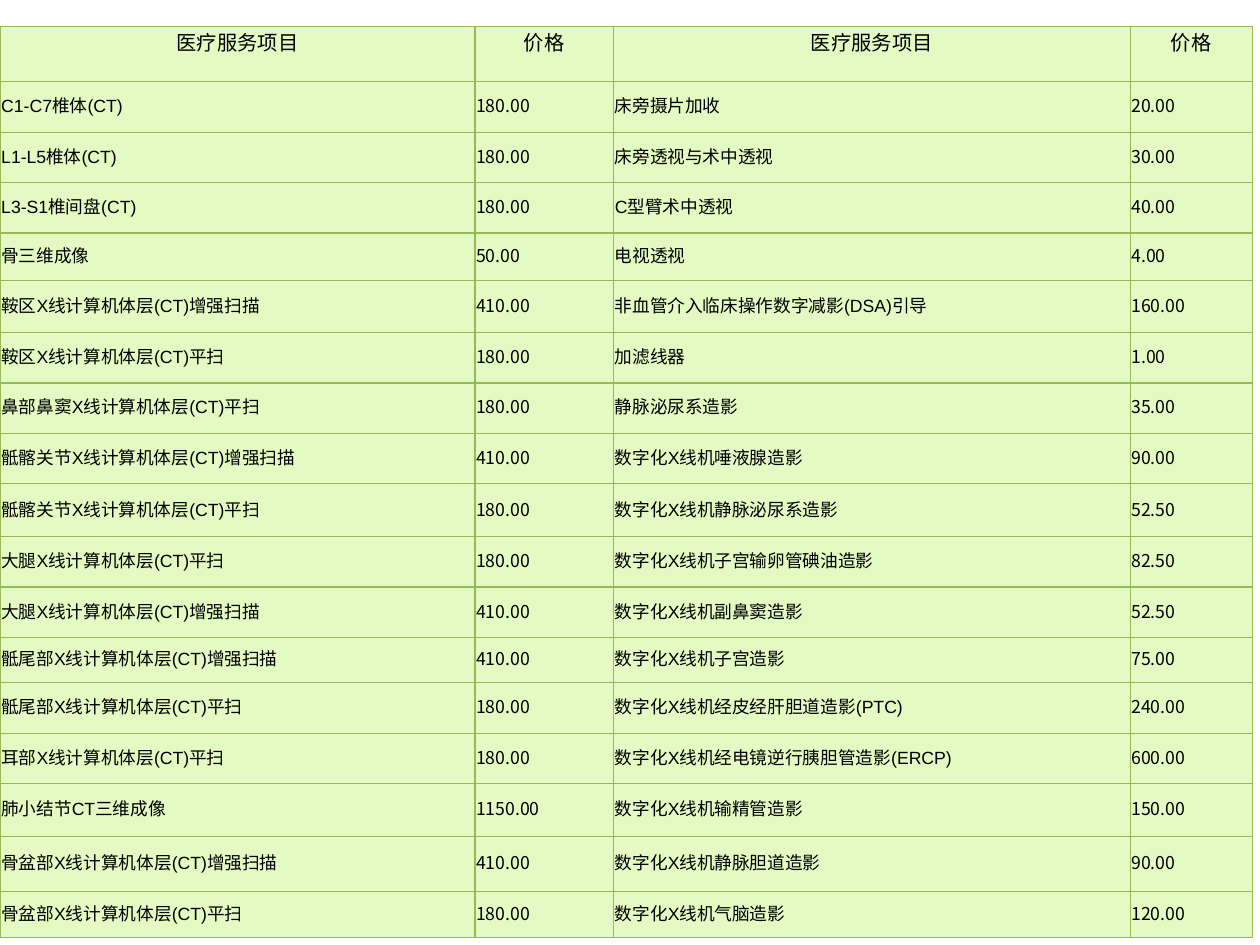
"""Build a price list slide of medical imaging services."""
from dataclasses import dataclass

from lxml.etree import SubElement
from pptx import Presentation
from pptx.dml.color import RGBColor
from pptx.enum.text import MSO_ANCHOR, PP_ALIGN
from pptx.oxml.ns import qn
from pptx.util import Inches, Pt


@dataclass(frozen=True)
class Theme:
    fill: str = "E3FAC3"
    line: str = "98B955"
    ink: str = "000000"
    head_font: str = "Calibri"
    item_font: str = "Arial"
    cost_font: str = "Noto Sans CJK SC"
    asian_font: str = "Noto Sans CJK SC"
    head_size: float = 11.6
    body_size: float = 10.1
    line_size: float = 0.75


theme = Theme()
widths = [3.77, 1.1, 4.1, 0.97]
heights = [0.44, 0.4, 0.4, 0.4, 0.38, 0.41, 0.4, 0.4, 0.4,
           0.42, 0.4, 0.4, 0.36, 0.4, 0.4, 0.42, 0.44, 0.36]
rows = [
    ("医疗服务项目", "价格", "医疗服务项目", "价格"),
    ("C1-C7椎体(CT)", "180.00", "床旁摄片加收", "20.00"),
    ("L1-L5椎体(CT)", "180.00", "床旁透视与术中透视", "30.00"),
    ("L3-S1椎间盘(CT)", "180.00", "C型臂术中透视", "40.00"),
    ("骨三维成像", "50.00", "电视透视", "4.00"),
    ("鞍区X线计算机体层(CT)增强扫描", "410.00", "非血管介入临床操作数字减影(DSA)引导", "160.00"),
    ("鞍区X线计算机体层(CT)平扫", "180.00", "加滤线器", "1.00"),
    ("鼻部鼻窦X线计算机体层(CT)平扫", "180.00", "静脉泌尿系造影", "35.00"),
    ("骶髂关节X线计算机体层(CT)增强扫描", "410.00", "数字化X线机唾液腺造影", "90.00"),
    ("骶髂关节X线计算机体层(CT)平扫", "180.00", "数字化X线机静脉泌尿系造影", "52.50"),
    ("大腿X线计算机体层(CT)平扫", "180.00", "数字化X线机子宫输卵管碘油造影", "82.50"),
    ("大腿X线计算机体层(CT)增强扫描", "410.00", "数字化X线机副鼻窦造影", "52.50"),
    ("骶尾部X线计算机体层(CT)增强扫描", "410.00", "数字化X线机子宫造影", "75.00"),
    ("骶尾部X线计算机体层(CT)平扫", "180.00", "数字化X线机经皮经肝胆道造影(PTC)", "240.00"),
    ("耳部X线计算机体层(CT)平扫", "180.00", "数字化X线机经电镜逆行胰胆管造影(ERCP)", "600.00"),
    ("肺小结节CT三维成像", "1150.00", "数字化X线机输精管造影", "150.00"),
    ("骨盆部X线计算机体层(CT)增强扫描", "410.00", "数字化X线机静脉胆道造影", "90.00"),
    ("骨盆部X线计算机体层(CT)平扫", "180.00", "数字化X线机气脑造影", "120.00"),
]


def add_border(cell):
    props = cell._tc.get_or_add_tcPr()
    for side in ("lnL", "lnR", "lnT", "lnB"):
        line = SubElement(props, qn(f"a:{side}"), w=str(Pt(theme.line_size)))
        paint = SubElement(line, qn("a:solidFill"))
        SubElement(paint, qn("a:srgbClr"), val=theme.line)


def set_text(cell, text, font, size):
    cell.text_frame.text = text
    run = cell.text_frame.paragraphs[0].runs[0]
    run.font.name = font
    run.font.size = Pt(size)
    run.font.bold = False
    run.font.color.rgb = RGBColor.from_string(theme.ink)
    SubElement(run.font._element, qn("a:ea"), typeface=theme.asian_font)


deck = Presentation()
deck.slide_width, deck.slide_height = Inches(10), Inches(7.5)
slide = deck.slides.add_slide(deck.slide_layouts[6])
frame = slide.shapes.add_table(len(rows), len(widths), Inches(0), Inches(0.21),
                               Inches(sum(widths)), Inches(sum(heights)))
table = frame.table
table.horz_banding = False
for col, width in zip(table.columns, widths):
    col.width = Inches(width)
for row, height in zip(table.rows, heights):
    row.height = Inches(height)

for r, row in enumerate(rows):
    for c, text in enumerate(row):
        cell = table.cell(r, c)
        add_border(cell)
        cell.fill.solid()
        cell.fill.fore_color.rgb = RGBColor.from_string(theme.fill)
        side, foot = (0, 0) if r == 0 else (0.01, 0.04)
        cell.margin_left = cell.margin_right = cell.margin_top = Inches(side)
        cell.margin_bottom = Inches(foot)
        if r == 0:
            set_text(cell, text, theme.head_font, theme.head_size)
            cell.text_frame.paragraphs[0].alignment = PP_ALIGN.CENTER
        else:
            font = theme.cost_font if c % 2 else theme.item_font
            set_text(cell, text, font, theme.body_size)
            cell.vertical_anchor = MSO_ANCHOR.MIDDLE

deck.save("out.pptx")
